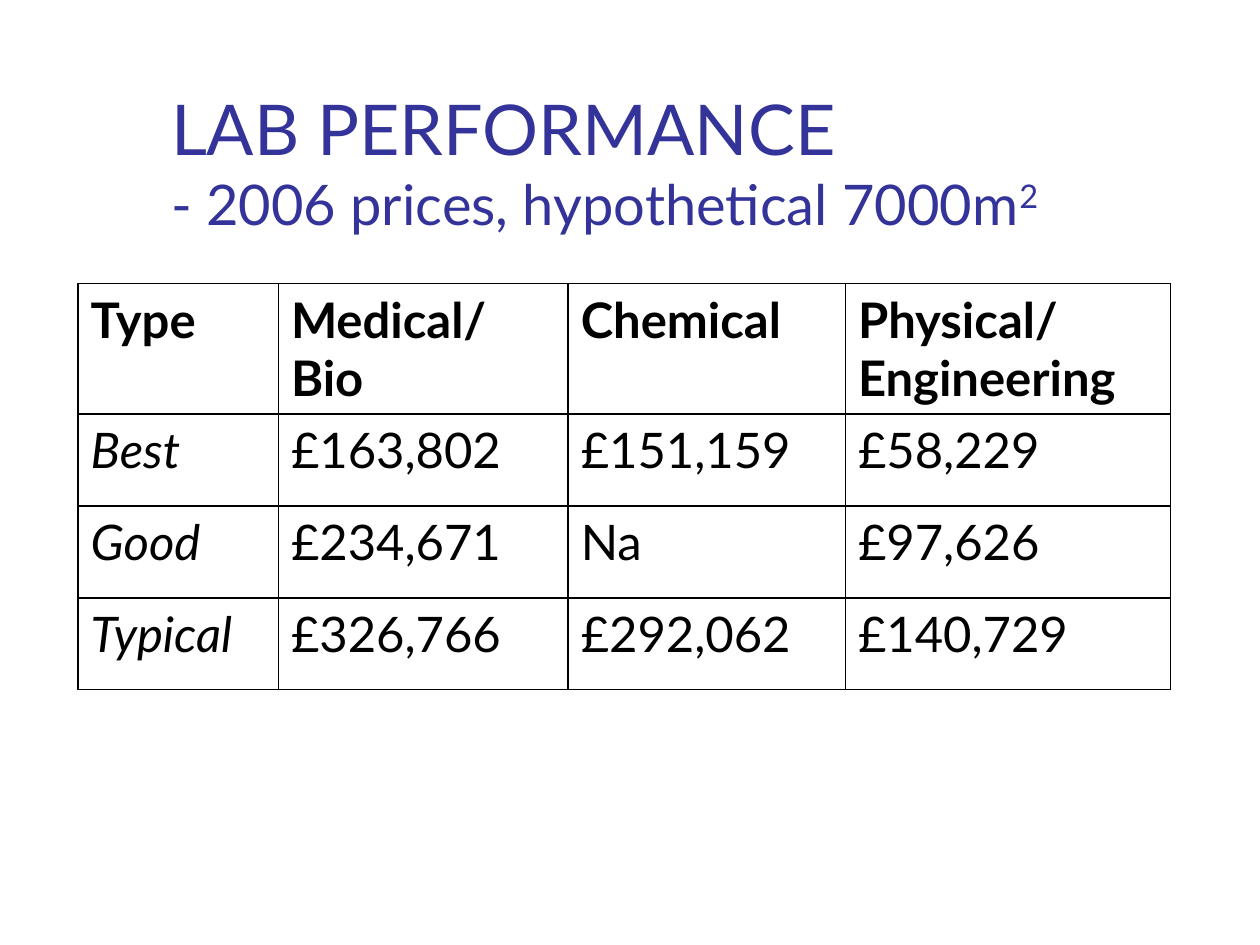
from dataclasses import dataclass

import pptx
import pptx.dml.color
import pptx.enum.text
import pptx.oxml
import pptx.oxml.ns
import pptx.util
from pptx.util import Inches


@dataclass(frozen=True)
class Theme:
    font: str = "Lato"
    title_color: str = "333399"
    text_color: str = "000000"
    border_color: str = "000000"
    border_width: float = 1
    title_size: float = 40
    subtitle_size: float = 32
    table_size: float = 28


THEME = Theme()
COLUMN_WIDTHS = [1.59, 2.3, 2.2, 2.58]
ROW_HEIGHTS = [1.03, 0.73, 0.73, 0.73]
LAB_COSTS = [
    ["Type", "Medical/\nBio", "Chemical", "Physical/\nEngineering"],
    ["Best", "£163,802", "£151,159", "£58,229"],
    ["Good", "£234,671", "Na", "£97,626"],
    ["Typical", "£326,766", "£292,062", "£140,729"],
]


def add_text(paragraph, text, *, size, color, bold=False, italic=False, baseline=None):
    """Append a formatted run; baseline is a raise in percent."""
    run = paragraph.add_run()
    run.text = text
    font = run.font
    font.name = THEME.font
    font.size = pptx.util.Pt(size)
    font.bold = bold
    font.italic = italic
    font.color.rgb = pptx.dml.color.RGBColor.from_string(color)
    if baseline is not None:
        run._r.get_or_add_rPr().set("baseline", str(baseline * 1000))


def add_title(slide):
    box = slide.shapes.add_textbox(Inches(1.26), Inches(0.68), Inches(8.52), Inches(1.25))
    frame = box.text_frame
    frame.word_wrap = True
    frame.vertical_anchor = pptx.enum.text.MSO_ANCHOR.BOTTOM
    paragraph = frame.paragraphs[0]
    color = THEME.title_color
    add_text(paragraph, "LAB PERFORMANCE", size=THEME.title_size, color=color)
    paragraph.add_line_break()
    add_text(paragraph, "- 2006 prices, hypothetical 7000m", size=THEME.subtitle_size, color=color)
    add_text(paragraph, "2", size=THEME.subtitle_size, color=color, baseline=30)


def set_borders(cell):
    properties = cell._tc.get_or_add_tcPr()
    width = pptx.util.Pt(THEME.border_width)
    for position, side in enumerate(("lnL", "lnR", "lnT", "lnB")):
        border = pptx.oxml.parse_xml(
            f'<a:{side} {pptx.oxml.ns.nsdecls("a")} w="{width}"><a:solidFill>'
            f'<a:srgbClr val="{THEME.border_color}"/></a:solidFill></a:{side}>'
        )
        properties.insert(position, border)


def fill_cell(cell, text, *, alignment, bold, italic):
    cell.fill.background()
    set_borders(cell)
    frame = cell.text_frame
    for index, line in enumerate(text.split("\n")):
        paragraph = frame.add_paragraph() if index else frame.paragraphs[0]
        paragraph.alignment = alignment
        add_text(paragraph, line, size=THEME.table_size, color=THEME.text_color,
                 bold=bold, italic=italic)


def add_cost_table(slide):
    frame = slide.shapes.add_table(
        len(ROW_HEIGHTS), len(COLUMN_WIDTHS), Inches(0.62), Inches(2.25),
        Inches(sum(COLUMN_WIDTHS)), Inches(sum(ROW_HEIGHTS)))
    table = frame.table
    table.horz_banding = False
    table.first_row = False
    for column, width in zip(table.columns, COLUMN_WIDTHS):
        column.width = Inches(width)
    for row, height in zip(table.rows, ROW_HEIGHTS):
        row.height = Inches(height)

    align = pptx.enum.text.PP_ALIGN
    last_column = len(COLUMN_WIDTHS) - 1
    for row_index, row in enumerate(LAB_COSTS):
        is_header = row_index == 0
        for column_index, text in enumerate(row):
            is_left = is_header or column_index == last_column
            fill_cell(table.cell(row_index, column_index), text,
                      alignment=align.LEFT if is_left else align.JUSTIFY,
                      bold=is_header,
                      italic=column_index == 0 and not is_header)


def main():
    presentation = pptx.Presentation()
    presentation.slide_width = Inches(10)
    presentation.slide_height = Inches(7.5)
    slide = presentation.slides.add_slide(presentation.slide_layouts[6])
    add_title(slide)
    add_cost_table(slide)
    presentation.save("out.pptx")


if __name__ == "__main__":
    main()
